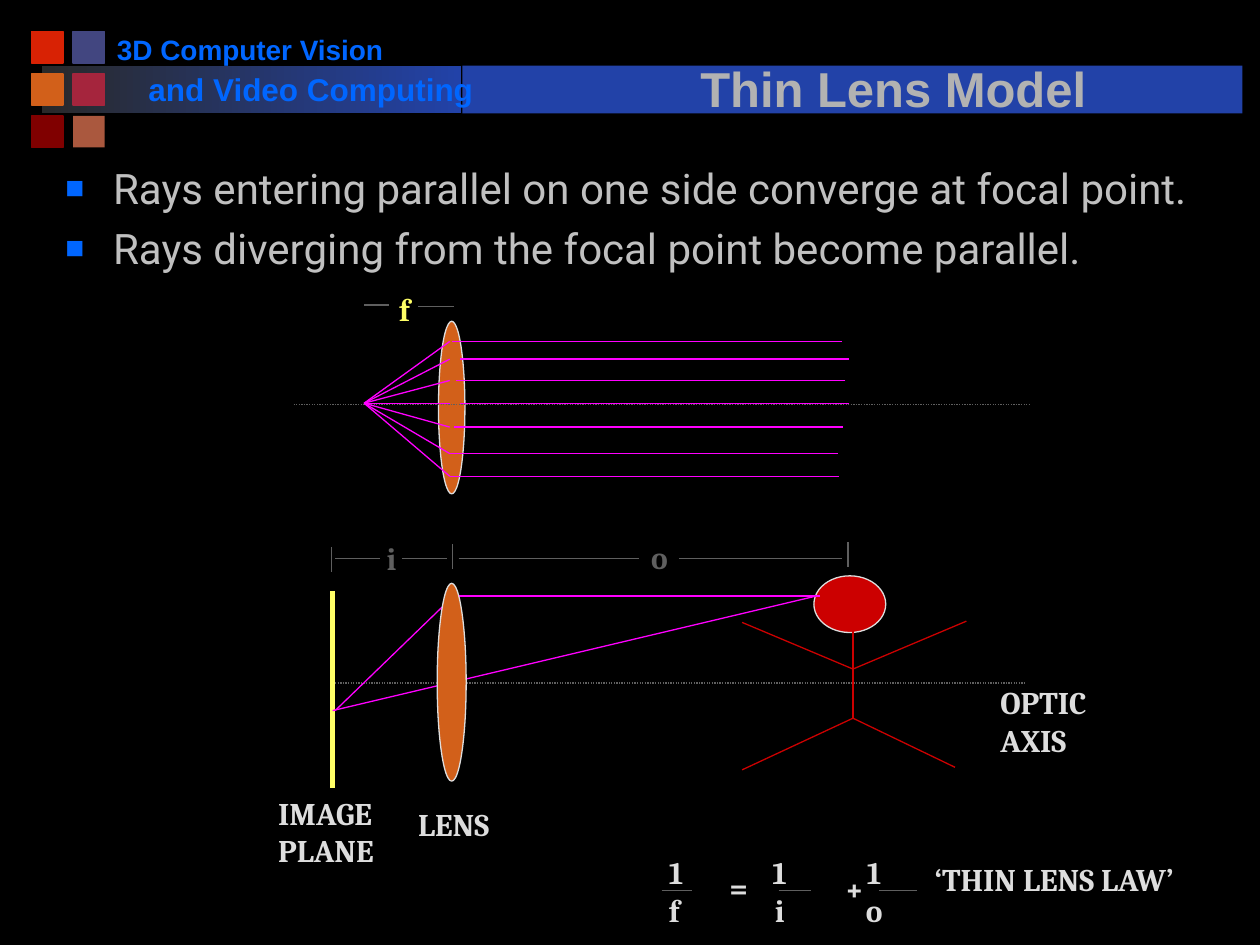
from dataclasses import dataclass
from typing import Optional

from lxml import etree
from pptx import Presentation
from pptx.dml.color import RGBColor
from pptx.enum.dml import MSO_LINE
from pptx.enum.shapes import MSO_CONNECTOR, MSO_SHAPE
from pptx.enum.text import MSO_ANCHOR, PP_ALIGN
from pptx.oxml.ns import qn
from pptx.util import Cm, Length, Pt

RECT, OVAL = MSO_SHAPE.RECTANGLE, MSO_SHAPE.OVAL
STRAIGHT = MSO_CONNECTOR.STRAIGHT
DOTS = MSO_LINE.ROUND_DOT
BLACK, PALE, GREY, SILVER = "000000", "DDDDDD", "5F5F5F", "C0C0C0"
BLUE, NAVY, PINK, RED = "0066FF", "2242A8", "FF00FF", "CC0000"
AMBER, YELLOW = "D2601A", "FFFF66"


@dataclass
class Shape:
    kind: int
    x: float
    y: float
    w: float
    h: float
    fill: str
    edge: Optional[str] = None
    width: float = 0.75


@dataclass
class Line:
    x1: float
    y1: float
    x2: float
    y2: float
    color: str = GREY
    width: float = 0.75
    dots: bool = False


@dataclass
class Label:
    text: str
    x: float
    y: float
    w: float
    h: float = 0.4
    color: str = PALE
    size: float = 18
    font: str = "Cambria"
    bold: bool = True
    wrap: bool = False


def grid(n: float) -> Length:
    """Turn a place on the slide's 10 by 7.5 grid into a length."""
    return Cm(n * 2.54)


def rgb(code: str) -> RGBColor:
    return RGBColor.from_string(code)


def draw_shape(slide, s: Shape):
    shape = slide.shapes.add_shape(s.kind, *map(grid, (s.x, s.y, s.w, s.h)))
    shape.shadow.inherit = False
    shape.fill.solid()
    shape.fill.fore_color.rgb = rgb(s.fill)
    if s.edge:
        shape.line.color.rgb = rgb(s.edge)
        shape.line.width = Pt(s.width)
    else:
        shape.line.fill.background()
    return shape


def draw_line(slide, s: Line) -> None:
    line = slide.shapes.add_connector(
        STRAIGHT, *map(grid, (s.x1, s.y1, s.x2, s.y2)))
    line.line.color.rgb = rgb(s.color)
    line.line.width = Pt(s.width)
    if s.dots:
        line.line.dash_style = DOTS
    etree.SubElement(line._element.spPr, qn("a:effectLst"))


def draw_label(slide, s: Label):
    box = slide.shapes.add_textbox(*map(grid, (s.x, s.y, s.w, s.h)))
    frame = box.text_frame
    frame.word_wrap = s.wrap
    frame.text = s.text
    for para in frame.paragraphs:
        for run in para.runs:
            run.font.size = Pt(s.size)
            run.font.name = s.font
            run.font.bold = s.bold
            run.font.color.rgb = rgb(s.color)
    return frame


def add_bullet(para) -> None:
    para.space_before = Pt(5.5)
    props = para._p.get_or_add_pPr()
    props.set("marL", str(grid(0.38)))
    props.set("indent", str(-grid(0.38)))
    tint = etree.SubElement(props, qn("a:buClr"))
    etree.SubElement(tint, qn("a:srgbClr"), val=BLUE)
    etree.SubElement(props, qn("a:buSzPct"), val="75000")
    etree.SubElement(props, qn("a:buFont"), typeface="Arial")
    etree.SubElement(props, qn("a:buChar"), char="■")


def add_tabs(para, stops: tuple) -> None:
    tabs = etree.SubElement(para._p.get_or_add_pPr(), qn("a:tabLst"))
    for stop in stops:
        etree.SubElement(tabs, qn("a:tab"), pos=str(grid(stop)), algn="ctr")


def add_shade(run) -> None:
    """Give the run a hard black shadow to the lower right."""
    list_ = etree.Element(qn("a:effectLst"))
    shade = etree.SubElement(list_, qn("a:outerShdw"), dist=str(Pt(2)),
                             dir="2700000", algn="ctr", rotWithShape="0")
    etree.SubElement(shade, qn("a:srgbClr"), val=BLACK)
    run._r.rPr.find(qn("a:solidFill")).addnext(list_)


def draw_head(slide) -> None:
    bar = draw_shape(slide, Shape(RECT, 0.33, 0.52, 3.33, 0.38, NAVY))
    bar.fill.gradient()
    bar.fill.gradient_angle = 0
    for stop, code in zip(bar.fill.gradient_stops, ("292929", NAVY)):
        stop.color.rgb = rgb(code)
    tiles = ("D82204", "424680", AMBER, "A5253D", "800000", "AA583E")
    for i, code in enumerate(tiles):
        row, col = divmod(i, 2)
        edge = code if i < len(tiles) - 1 else None
        draw_shape(slide, Shape(RECT, 0.25 + col * 0.33, 0.25 + row * 0.335,
                                0.25, 0.25, code, edge, 1))
    draw_shape(slide, Shape(RECT, 3.67, 0.52, 6.19, 0.38, NAVY))
    draw_label(slide, Label("3D Computer Vision", 0.83, 0.21, 2.32, 0.37,
                            BLUE, 16, "Arial"))
    draw_label(slide, Label("and Video Computing", 1.08, 0.51, 2.83, 0.4,
                            BLUE, 18, "Arial"))
    title = draw_label(slide, Label("Thin Lens Model", 4.24, 0.31, 5.7, 0.67,
                                    "B2B2B2", 28, "Arial", wrap=True))
    title.vertical_anchor = MSO_ANCHOR.BOTTOM
    title.paragraphs[0].alignment = PP_ALIGN.CENTER
    add_shade(title.paragraphs[0].runs[0])


def draw_focus(slide) -> None:
    draw_shape(slide, Shape(OVAL, 3.48, 2.55, 0.21, 1.37, AMBER, PALE))
    draw_line(slide, Line(2.33, 3.21, 8.17, 3.21, dots=True))
    rays = ((2.71, 6.68), (2.85, 6.74), (3.02, 6.71), (3.2, 6.74),
            (3.39, 6.69), (3.6, 6.65), (3.78, 6.66))
    for y, end in rays:
        draw_line(slide, Line(end, y, end - 3.09, y, PINK))
        draw_line(slide, Line(3.57, y, 2.89, 3.2, PINK))
    draw_label(slide, Label("f", 3.07, 2.25, 0.29, color=YELLOW))
    draw_line(slide, Line(3.32, 2.43, 3.6, 2.43))
    draw_line(slide, Line(2.89, 2.42, 3.09, 2.42))


def draw_scene(slide) -> None:
    draw_line(slide, Line(2.64, 4.69, 2.64, 6.25, YELLOW, 3))
    draw_line(slide, Line(2.66, 5.42, 8.13, 5.42, dots=True))
    draw_shape(slide, Shape(OVAL, 6.46, 4.57, 0.57, 0.45, RED, PALE))
    draw_line(slide, Line(6.77, 5.01, 6.77, 5.71, RED))
    limbs = ((5.31, 7.67, 4.93), (5.31, 5.89, 4.94),
             (5.7, 5.89, 6.11), (5.7, 7.58, 6.09))
    for y, x2, y2 in limbs:
        draw_line(slide, Line(6.77, y, x2, y2, RED))
    rays = ((6.48, 4.73, 2.64, 5.64), (6.51, 4.73, 3.6, 4.73),
            (3.6, 4.73, 2.66, 5.64))
    for ray in rays:
        draw_line(slide, Line(*ray, PINK))
    draw_shape(slide, Shape(OVAL, 3.47, 4.63, 0.23, 1.57, AMBER, PALE))
    for x, y in ((2.63, 4.34), (3.59, 4.32), (6.73, 4.3)):
        draw_line(slide, Line(x, y, x, y + 0.2))
    for x1, x2 in ((2.66, 3.02), (3.19, 3.55), (3.64, 5.07), (5.39, 6.68)):
        draw_line(slide, Line(x1, 4.43, x2, 4.43))
    for label in (Label("IMAGE\nPLANE", 2.11, 6.25, 1.08, 0.7),
                  Label("OPTIC\nAXIS", 7.84, 5.37, 0.99, 0.7),
                  Label("LENS", 3.22, 6.34, 0.85),
                  Label("i", 2.97, 4.23, 0.27, color=GREY),
                  Label("o", 5.07, 4.22, 0.33, color=GREY)):
        draw_label(slide, label)


def draw_law(slide) -> None:
    terms = draw_label(slide, Label("1\t1\t1\nf\ti\to", 5.21, 6.72, 2.1, 0.7,
                                    wrap=True))
    for para in terms.paragraphs:
        add_tabs(para, (0.88, 1.63))
    for x1, x2 in ((5.25, 5.49), (6.18, 6.44), (6.98, 7.28)):
        draw_line(slide, Line(x1, 7.07, x2, 7.07))
    for label in (Label("=", 5.69, 6.84, 0.34), Label("+", 6.61, 6.85, 0.34),
                  Label("‘THIN LENS LAW’", 7.32, 6.78, 2.38)):
        draw_label(slide, label)


def main() -> None:
    deck = Presentation()
    deck.slide_width, deck.slide_height = grid(10), grid(7.5)
    slide = deck.slides.add_slide(deck.slide_layouts[6])
    slide.background.fill.solid()
    slide.background.fill.fore_color.rgb = rgb(BLACK)
    draw_head(slide)
    draw_focus(slide)
    draw_scene(slide)
    draw_law(slide)
    facts = ("Rays entering parallel on one side converge at focal point.\n"
             "Rays diverging from the focal point become parallel.")
    body = draw_label(slide, Label(facts, 0.42, 1.24, 9.33, 2.58, SILVER, 24,
                                   "Roboto", False, True))
    for para in body.paragraphs:
        add_bullet(para)
    deck.save("out.pptx")


if __name__ == "__main__":
    main()
